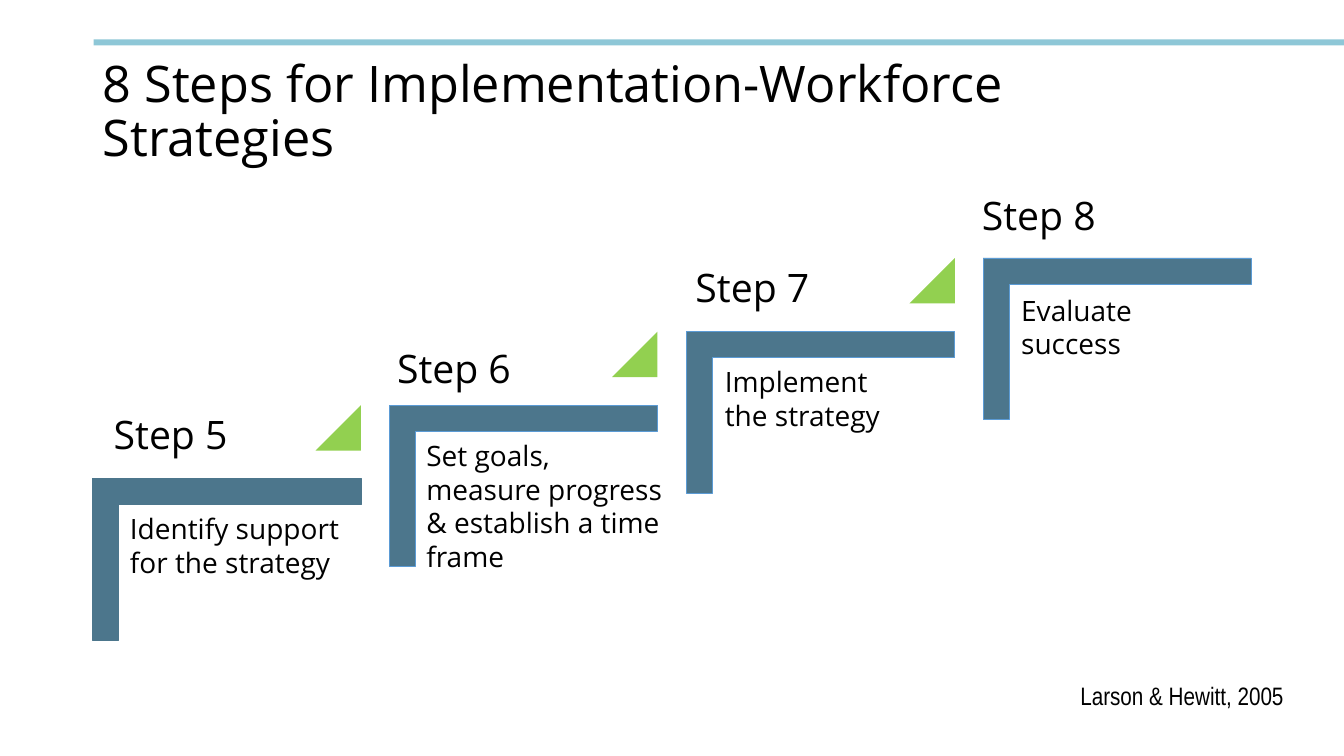
"""Builds the staircase slide with steps 5 to 8 for workforce strategies."""
from dataclasses import dataclass

from pptx import Presentation
from pptx.dml.color import RGBColor
from pptx.enum.shapes import MSO_SHAPE
from pptx.enum.text import MSO_ANCHOR, MSO_AUTO_SIZE, PP_ALIGN
from pptx.util import Emu, Pt

EMU_PER_PX = 9144
BLANK_LAYOUT = 6
RECTANGLE = MSO_SHAPE.RECTANGLE
CORNER = MSO_SHAPE.CORNER
TRIANGLE = MSO_SHAPE.ISOSCELES_TRIANGLE
TOP, MIDDLE = MSO_ANCHOR.TOP, MSO_ANCHOR.MIDDLE
LEFT, RIGHT = PP_ALIGN.LEFT, PP_ALIGN.RIGHT
NO_AUTO_SIZE = MSO_AUTO_SIZE.NONE

BLACK = RGBColor(0x00, 0x00, 0x00)
LIGHT_BLUE = RGBColor(0x8E, 0xC7, 0xD7)
STEEL = RGBColor(0x4C, 0x76, 0x8C)
BLUE = RGBColor(0x5B, 0x9B, 0xD5)
GREEN = RGBColor(0x92, 0xD0, 0x50)

STEP_RUN = 294.4
STEP_RISE = 73


@dataclass(frozen=True)
class Box:
    """A rectangle in px, a hundred to the inch."""
    left: int
    top: int
    width: int
    height: int

    def emu(self) -> tuple[Emu, ...]:
        """Give the four lengths in EMU."""
        return tuple(Emu(length * EMU_PER_PX) for length in
                     (self.left, self.top, self.width, self.height))


@dataclass(frozen=True)
class Step:
    """One stair with its label and its description."""
    label: str
    label_box: Box
    description: str
    description_box: Box
    outline: RGBColor = BLUE


STEPS = (
    Step("Step 5", Box(103, 402, 210, 57),
         "Identify support for the strategy", Box(119, 503, 229, 77), STEEL),
    Step("Step 6", Box(384, 337, 210, 57),
         "Set goals, \nmeasure progress & establish a time frame",
         Box(413, 430, 267, 145)),
    Step("Step 7", Box(680, 256, 210, 57),
         "Implement \nthe strategy", Box(709, 357, 238, 77)),
    Step("Step 8", Box(964, 185, 210, 57),
         "Evaluate success", Box(1003, 286, 226, 77)),
)


def add_text(shapes, text: str, box: Box, *, size: int, font: str = "Open Sans",
             align: PP_ALIGN = LEFT, anchor: MSO_ANCHOR = TOP,
             line_spacing: float = 1.0) -> None:
    """Add a wrapping text box with one paragraph."""
    frame = shapes.add_textbox(*box.emu()).text_frame
    frame.word_wrap = True
    frame.auto_size = NO_AUTO_SIZE
    frame.vertical_anchor = anchor
    paragraph = frame.paragraphs[0]
    paragraph.text = text.replace("\n", "\v")
    paragraph.alignment = align
    paragraph.line_spacing = line_spacing
    for run in paragraph.runs:
        run.font.name = font
        run.font.size = Pt(size)
        run.font.color.rgb = BLACK


def add_filled(shapes, kind: MSO_SHAPE, box: Box, fill: RGBColor, *,
               outline: RGBColor | None = None, rotation: int = 0,
               adjustments: tuple[float, ...] = ()) -> None:
    """Add a flat preset shape, outlined only when a colour is given."""
    shape = shapes.add_shape(kind, *box.emu())
    shape.shadow.inherit = False
    shape.rotation = rotation
    for index, value in enumerate(adjustments):
        shape.adjustments[index] = value
    shape.fill.solid()
    shape.fill.fore_color.rgb = fill
    if outline is None:
        shape.line.fill.background()
    else:
        shape.line.color.rgb = outline
        shape.line.width = Pt(0.5)


def add_step(slide, index: int, step: Step) -> None:
    """Draw one stair, with a triangle unless it is the last."""
    shapes = slide.shapes.add_group_shape().shapes
    run, rise = round(index * STEP_RUN), index * STEP_RISE
    add_filled(shapes, CORNER, Box(145 + run, 422 - rise, 160, 266), STEEL,
               outline=step.outline, rotation=90, adjustments=(0.161, 0.161))
    if index < len(STEPS) - 1:
        add_filled(shapes, TRIANGLE, Box(313 + run, 402 - rise, 45, 45), GREEN,
                   adjustments=(1.0,))
    add_text(shapes, step.label, step.label_box, size=28)
    add_text(shapes, step.description, step.description_box, size=20)


def main() -> None:
    """Build and save the slide."""
    presentation = Presentation()
    presentation.slide_width = Emu(1333 * EMU_PER_PX)
    presentation.slide_height = Emu(750 * EMU_PER_PX)
    slide = presentation.slides.add_slide(presentation.slide_layouts[BLANK_LAYOUT])
    add_filled(slide.shapes, RECTANGLE, Box(93, 39, 1240, 6), LIGHT_BLUE)
    add_text(slide.shapes, "8 Steps for Implementation-Workforce Strategies",
             Box(92, 40, 1145, 145), size=36, anchor=MIDDLE, line_spacing=0.9)
    add_text(slide.shapes, "Larson & Hewitt, 2005", Box(1004, 670, 279, 40),
             size=18, font="Arial Narrow", align=RIGHT)
    for index, step in enumerate(STEPS):
        add_step(slide, index, step)
    presentation.save("out.pptx")


if __name__ == "__main__":
    main()
